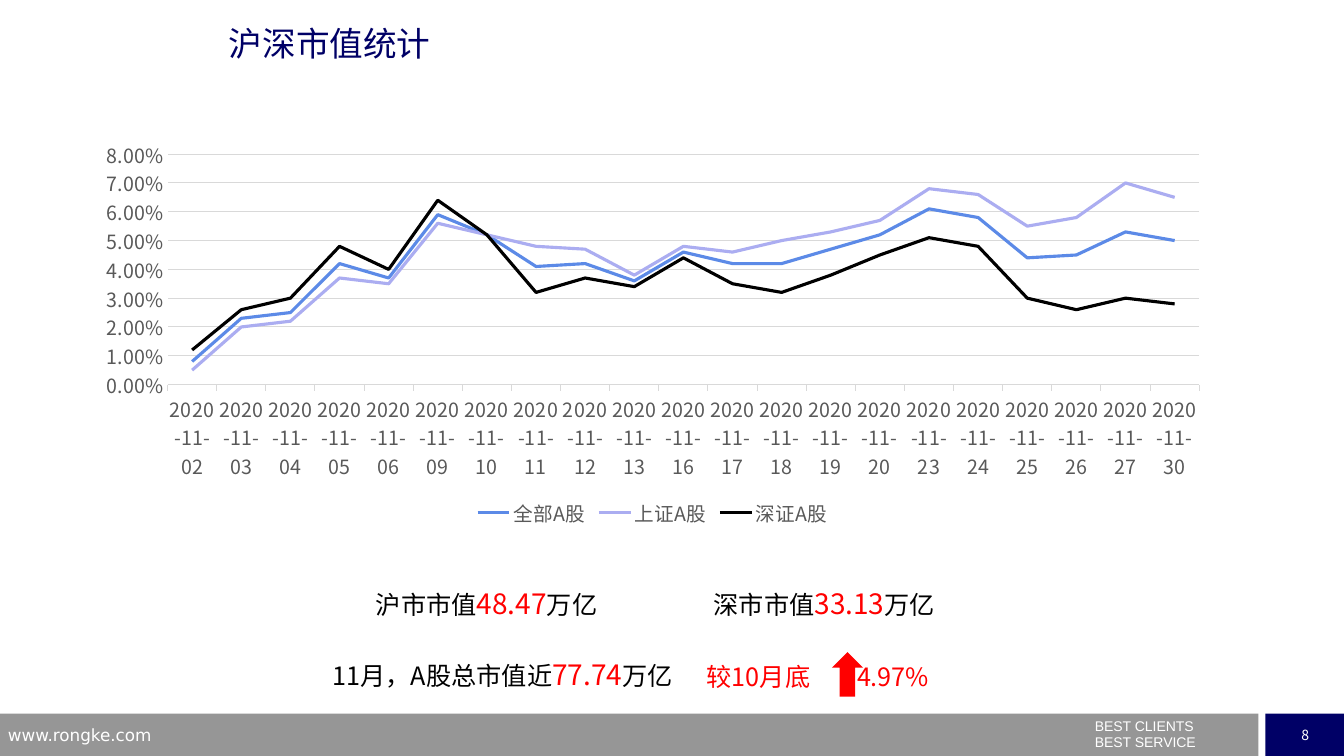
from lxml import etree
from pptx import Presentation
from pptx import util as u
from pptx.chart import data
from pptx.dml.color import RGBColor
from pptx.enum import chart as ch, shapes, text
from pptx.oxml import ns

Inches, Pt = u.Inches, u.Pt
FONT = "Noto Sans CJK SC"
COLORS = {
    "navy": "000066", "grey": "969696", "white": "FFFFFF", "black": "000000",
    "red": "FF0000", "label": "595959", "grid": "D9D9D9",
    "all": "5C8AE7", "shanghai": "ABADF1", "shenzhen": "000000",
}
DAYS = [44137 + 7 * week + day for week in range(5) for day in range(5)][:21]
SERIES = [
    ("全部A股", "all", [0.8, 2.3, 2.5, 4.2, 3.7, 5.9, 5.2, 4.1, 4.2, 3.6, 4.6,
                     4.2, 4.2, 4.7, 5.2, 6.1, 5.8, 4.4, 4.5, 5.3, 5.0]),
    ("上证A股", "shanghai", [0.5, 2.0, 2.2, 3.7, 3.5, 5.6, 5.2, 4.8, 4.7, 3.8, 4.8,
                          4.6, 5.0, 5.3, 5.7, 6.8, 6.6, 5.5, 5.8, 7.0, 6.5]),
    ("深证A股", "shenzhen", [1.2, 2.6, 3.0, 4.8, 4.0, 6.4, 5.2, 3.2, 3.7, 3.4, 4.4,
                          3.5, 3.2, 3.8, 4.5, 5.1, 4.8, 3.0, 2.6, 3.0, 2.8]),
]


def rgb(name):
    return RGBColor.from_string(COLORS[name])


def set_font(font, size, color, name=FONT):
    font.size, font.name = Pt(size), name
    font.color.rgb = rgb(color)


def style(p, size, color, name=FONT):
    set_font(p.font, size, color, name)
    for props in p._p.iter(ns.qn("a:defRPr")):
        latin = props.find(ns.qn("a:latin"))
        ea = etree.Element(ns.qn("a:ea"), typeface=name)
        latin.addnext(ea)


def add_block(s, kind, box, color):
    sp = s.shapes.add_shape(kind, *map(Inches, box))
    sp.shadow.inherit = False
    sp.fill.solid()
    sp.fill.fore_color.rgb = rgb(color)
    sp.line.fill.background()
    return sp


def add_text(s, box, lines, size, color, name=FONT):
    tf = s.shapes.add_textbox(*map(Inches, box)).text_frame
    tf.word_wrap = True
    tf.text = "\n".join(lines)
    for p in tf.paragraphs:
        style(p, size, color, name)
    return tf


def add_figure(s, box, label, value):
    tf = add_text(s, box, [label], 18, "black")
    p = tf.paragraphs[0]
    r = p.add_run()
    r.text = value
    r.font.size = Pt(20)
    r.font.color.rgb = rgb("red")
    p.add_run().text = "万亿"


def add_change(s):
    tf = add_text(s, (6.81, 6.51, 3.02, 0.4), [], 18, "red")
    tf.margin_left = Inches(0.2)
    p = tf.paragraphs[0]
    p.text = "较10月底\t4.97%"
    tabs = etree.Element(ns.qn("a:tabLst"))
    etree.SubElement(tabs, ns.qn("a:tab"), pos=str(Inches(1.49)), algn="l")
    p._p.get_or_add_pPr().insert(0, tabs)
    add_block(s, shapes.MSO_SHAPE.UP_ARROW, (8.25, 6.47, 0.31, 0.44), "red")


def add_footer(s):
    rect = shapes.MSO_SHAPE.RECTANGLE
    add_block(s, rect, (0, 7.08, 12.48, 0.42), "grey")
    tf = add_block(s, rect, (12.55, 7.08, 0.79, 0.42), "navy").text_frame
    tf.text = "8"
    tf.word_wrap = False
    tf.vertical_anchor = text.MSO_ANCHOR.MIDDLE
    tf.paragraphs[0].alignment = text.PP_ALIGN.CENTER
    style(tf.paragraphs[0], 10, "white")
    tf = add_text(s, (10.76, 7.14, 2.56, 0.36),
                  ["BEST CLIENTS", "BEST SERVICE"], 10, "white", "Arial")
    for p in tf.paragraphs:
        p.line_spacing = 0.5
    tf.paragraphs[1].space_before = Pt(5.75)
    add_text(s, (-0.02, 7.14, 3.22, 0.26), ["www.rongke.com"], 12, "white", "DejaVu Sans")


def set_title(s, title):
    sp = s.shapes.title
    sp.left, sp.top, sp.width, sp.height = map(Inches, (2.17, 0.18, 9, 1.25))
    tf = sp.text_frame
    tf.text = title
    tf.vertical_anchor = text.MSO_ANCHOR.TOP
    p = tf.paragraphs[0]
    p.alignment = text.PP_ALIGN.LEFT
    style(p, 24, "navy")


def set_line(line, color, width):
    line.color.rgb = rgb(color)
    line.width = Pt(width)


def add_market_chart(s):
    cd = data.CategoryChartData(number_format="0.00%")
    cd.categories = DAYS
    cd.categories.number_format = "yyyy-mm-dd"
    for name, _, percents in SERIES:
        cd.add_series(name, [round(v / 100, 3) for v in percents])
    box = map(Inches, (0.83, 1.31, 11.29, 3.96))
    chart = s.shapes.add_chart(ch.XL_CHART_TYPE.LINE, *box, cd).chart
    set_font(chart.font, 10, "black")
    chart.has_title = False
    chart.has_legend = True
    chart.legend.position = ch.XL_LEGEND_POSITION.BOTTOM
    chart.legend.include_in_layout = False
    set_font(chart.legend.font, 14, "label")
    chart.plots[0].vary_by_categories = False
    for series, (_, color, _) in zip(chart.plots[0].series, SERIES):
        series.smooth = False
        series.marker.style = ch.XL_MARKER_STYLE.NONE
        set_line(series.format.line, color, 2.25)
    cat, val = chart.category_axis, chart.value_axis
    for axis, fmt in ((cat, "yyyy-mm-dd"), (val, "0.00%")):
        set_font(axis.tick_labels.font, 14, "label")
        axis.tick_labels.number_format = fmt
        axis.tick_labels.number_format_is_linked = False
    for auto in chart._chartSpace.iter(ns.qn("c:auto")):
        auto.set("val", "0")
    cat.major_tick_mark = ch.XL_TICK_MARK.OUTSIDE
    set_line(cat.format.line, "grid", 0.75)
    val.minimum_scale, val.maximum_scale, val.major_unit = 0, 0.08, 0.01
    val.major_tick_mark = ch.XL_TICK_MARK.NONE
    val.format.line.fill.background()
    set_line(val.major_gridlines.format.line, "grid", 0.75)


def main():
    prs = Presentation()
    prs.slide_width, prs.slide_height = Inches(13.33), Inches(7.5)
    s = prs.slides.add_slide(prs.slide_layouts[5])
    add_footer(s)
    set_title(s, "沪深市值统计")
    add_figure(s, (3.2, 6.47, 4.02, 0.44), "11月，A股总市值近", "77.74")
    add_figure(s, (6.98, 5.77, 2.84, 0.44), "深市市值", "33.13")
    add_figure(s, (3.63, 5.77, 2.84, 0.44), "沪市市值", "48.47")
    add_change(s)
    add_market_chart(s)
    prs.save("out.pptx")


if __name__ == "__main__":
    main()
